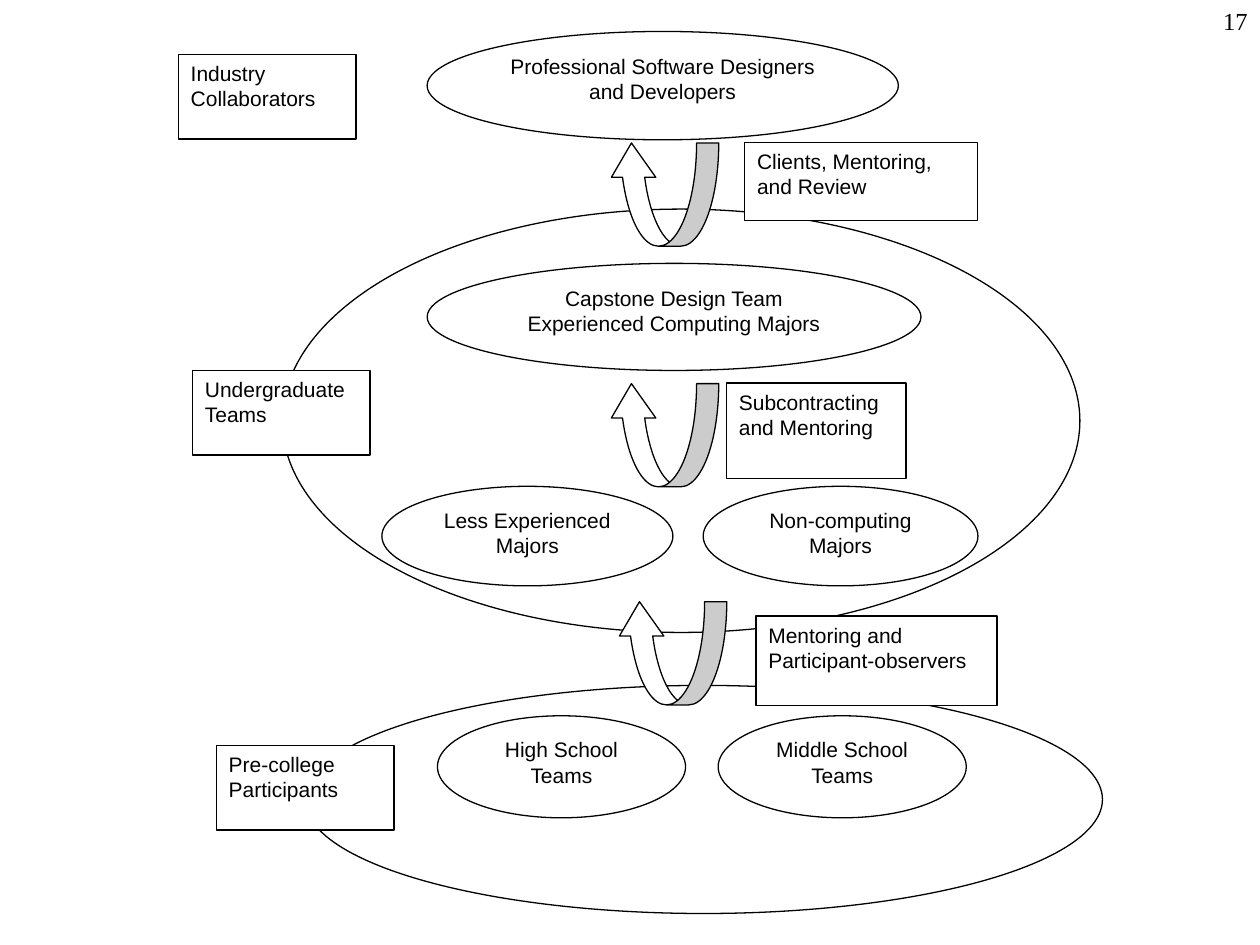
import pptx
import pptx.util
import pptx.dml.color
import pptx.enum.shapes
import pptx.enum.text

Pt = pptx.util.Pt
RGB = pptx.dml.color.RGBColor
Kind = pptx.enum.shapes.MSO_SHAPE
Align = pptx.enum.text.PP_ALIGN

THEME = {
    "ink": RGB(0, 0, 0), "paper": RGB(255, 255, 255), "line": 0.75,
    "font": "Arial", "size": 12, "number_font": "Times New Roman", "number_size": 14,
}

# Content: (left, top, width, height) in points, then text
PAGE_NUMBER = ("17", (671.8, 0, 48.2, 30.2))
COMMUNITIES = [(174.2, 391.7, 455.8, 130.3), (161.3, 119.5, 455.8, 241.9)]
GROUPS = [
    ((244.1, 18, 269.3, 61.9), "Professional Software Designers and Developers"),
    ((244.1, 150.5, 282.2, 61.2), "Capstone Design Team\nExperienced Computing Majors"),
    ((218.2, 277.9, 166.3, 56.9), "Less Experienced Majors"),
    ((401.8, 277.9, 157, 56.9), "Non-computing Majors"),
    ((250, 409, 141.8, 58.3), "High School Teams"),
    ((410.4, 409, 141.8, 58.3), "Middle School Teams"),
]
EXCHANGES = [
    ((425.5, 81.4, 133.2, 44.8), "Clients, Mentoring, and Review"),
    ((415.2, 218.9, 102.5, 54.5), "Subcontracting and Mentoring"),
    ((432, 352, 137.7, 51.1), "Mentoring and Participant-observers"),
]
LEVEL_SIZE = (101.5, 48.4)
LEVELS = [
    ((101.9, 31), "Industry Collaborators"),
    ((110, 211.7), "Undergraduate Teams"),
    ((123.6, 426), "Pre-college Participants"),
]
ARROW_SIZE = (59, 62.6)
ARROWS = [(349.9, 79.9), (349.9, 217.4), (354.5, 342)]
ARROW_BENDS = (0.215, 0.43, 0.333)


def write(shape, text, align=Align.LEFT, font=THEME["font"], size=THEME["size"]):
    frame = shape.text_frame
    frame.word_wrap = True
    frame.vertical_anchor = pptx.enum.text.MSO_ANCHOR.TOP
    frame.text = text
    for para in frame.paragraphs:
        para.alignment = align
        for span in para.runs:
            span.font.name = font
            span.font.size = Pt(size)
            span.font.color.rgb = THEME["ink"]


def draw(page, kind, place):
    shape = page.shapes.add_shape(kind, *map(Pt, place))
    shape.shadow.inherit = False
    shape.fill.solid()
    shape.fill.fore_color.rgb = THEME["paper"]
    shape.line.color.rgb = THEME["ink"]
    shape.line.width = Pt(THEME["line"])
    return shape


def main():
    deck = pptx.Presentation()
    deck.slide_width, deck.slide_height = Pt(720), Pt(540)
    page = deck.slides.add_slide(deck.slide_layouts[6])

    # Page number
    text, place = PAGE_NUMBER
    box = page.shapes.add_textbox(*map(Pt, place))
    write(box, text, align=Align.RIGHT, font=THEME["number_font"],
          size=THEME["number_size"])

    # Large ovals, with the groups inside them
    for place in COMMUNITIES:
        draw(page, Kind.OVAL, place)
    for place, text in GROUPS:
        write(draw(page, Kind.OVAL, place), text, align=Align.CENTER)

    # Return arrows between the levels
    for corner in ARROWS:
        arrow = draw(page, Kind.CURVED_LEFT_ARROW, corner + ARROW_SIZE)
        arrow.rotation = 90
        for index, bend in enumerate(ARROW_BENDS):
            arrow.adjustments[index] = bend

    # Labels of exchanges and levels
    labels = EXCHANGES + [(corner + LEVEL_SIZE, text) for corner, text in LEVELS]
    for place, text in labels:
        write(draw(page, Kind.RECTANGLE, place), text)

    deck.save("out.pptx")


if __name__ == "__main__":
    main()
